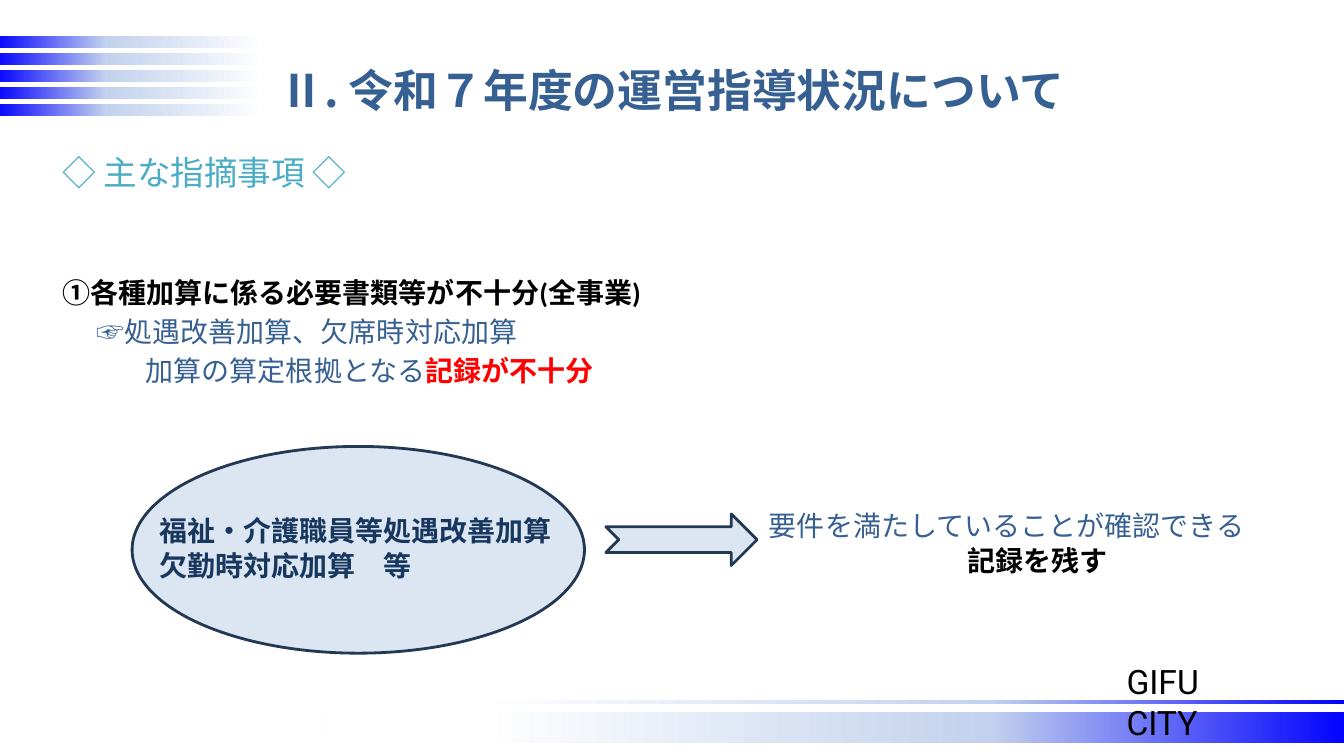
import lxml.etree
import pptx
import pptx.dml.color
import pptx.enum.shapes
import pptx.enum.text
import pptx.oxml.ns
import pptx.util
from pptx.util import Cm

SHAPES = pptx.enum.shapes.MSO_SHAPE
ANCHOR = pptx.enum.text.MSO_ANCHOR
ALIGN = pptx.enum.text.PP_ALIGN
qn = pptx.oxml.ns.qn

GOTHIC = "Noto Sans CJK JP"
BLUE, NAVY, BLACK, RED, TEAL = "376092", "17375E", "000000", "FF0000", "4BACC6"
PALE, OUTLINE = "DCE6F2", "233953"
FADE = [(0, "0000FF"), (35, "C2D1ED"), (85, "FFFFFF")]


def color(hex_code):
    return pptx.dml.color.RGBColor.from_string(hex_code)


def run(text, hex_code, size=20, bold=False, font=GOTHIC):
    return {"text": text, "color": hex_code, "east_asian": GOTHIC,
            "format": {"size": pptx.util.Pt(size), "bold": bold, "name": font}}


def line(*runs, indent=0, spacing=25, before=0, align=ALIGN.LEFT):
    """Describe a paragraph; a whole-number spacing is in points, a fraction is relative."""
    if isinstance(spacing, int):
        spacing = pptx.util.Pt(spacing)
    return {"runs": runs, "indent": indent,
            "format": {"line_spacing": spacing, "space_before": pptx.util.Pt(before),
                       "alignment": align}}


def apply(target, values):
    for name, value in values.items():
        setattr(target, name, value)


def write(frame, lines, anchor=ANCHOR.TOP):
    apply(frame, {"word_wrap": True, "vertical_anchor": anchor,
                  "auto_size": pptx.enum.text.MSO_AUTO_SIZE.NONE})
    for number, content in enumerate(lines):
        paragraph = frame.add_paragraph() if number else frame.paragraphs[0]
        properties = paragraph._p.get_or_add_pPr()
        properties.set("marL", str(Cm(content["indent"])))
        properties.set("indent", "0")
        lxml.etree.SubElement(properties, qn("a:buNone"))
        apply(paragraph, content["format"])
        for part in content["runs"]:
            piece = paragraph.add_run()
            piece.text = part["text"]
            apply(piece.font, part["format"])
            piece.font.color.rgb = color(part["color"])
            east_asian = lxml.etree.SubElement(piece._r.get_or_add_rPr(), qn("a:ea"))
            east_asian.set("typeface", part["east_asian"])


def fill_placeholder(slide, placeholder, box, lines, anchor=ANCHOR.TOP):
    """Move a placeholder in front of the bars and write its text."""
    apply(placeholder, dict(zip(("left", "top", "width", "height"), map(Cm, box))))
    slide.shapes._spTree.append(placeholder._element)
    write(placeholder.text_frame, lines, anchor)


def add_label(slide, box, lines):
    write(slide.shapes.add_textbox(*map(Cm, box)).text_frame, lines)


def add_outlined(slide, kind, box):
    shape = slide.shapes.add_shape(kind, *map(Cm, box))
    shape.shadow.inherit = False
    shape.fill.solid()
    shape.fill.fore_color.rgb = color(PALE)
    shape.line.color.rgb = color(OUTLINE)
    shape.line.width = pptx.util.Pt(2)


def add_fading_bar(slide, box, rotation=0):
    bar = slide.shapes.add_shape(SHAPES.RECTANGLE, *map(Cm, box))
    bar.shadow.inherit = False
    bar.rotation = rotation
    bar.line.fill.background()
    bar.fill.gradient()
    bar.fill.gradient_angle = 0
    stops = bar._element.spPr.find(qn("a:gradFill")).find(qn("a:gsLst"))
    for stop in list(stops):
        stops.remove(stop)
    for percent, hex_code in FADE:
        stop = lxml.etree.SubElement(stops, qn("a:gs"), pos=str(percent * 1000))
        lxml.etree.SubElement(stop, qn("a:srgbClr"), val=hex_code)


def main():
    deck = pptx.Presentation()
    deck.slide_width, deck.slide_height = Cm(33.87), Cm(19.05)
    slide = deck.slides.add_slide(deck.slide_layouts[1])
    title, findings = slide.placeholders

    add_fading_bar(slide, (8.25, 17.93, 25.73, 0.79), rotation=180)
    for stripe in range(5):
        add_fading_bar(slide, (-0.13, 0.91 + 0.43 * stripe, 8, 0.3))
    add_fading_bar(slide, (8.23, 17.63, 25.73, 0.1), rotation=180)
    add_label(slide, (28.14, 16.54, 4.06, 1.27),
              [line(run("GIFU CITY", BLACK, 24, font="Roboto"), spacing=1.0)])

    fill_placeholder(slide, title, (1.7, 0.76, 30.48, 3.18), [
        line(run("Ⅱ. 令和７年度の運営指導状況について", BLUE, 32, True),
             spacing=0.9, align=ALIGN.CENTER)], ANCHOR.MIDDLE)
    fill_placeholder(slide, findings, (1.32, 3.63, 29.21, 6.07), [
        line(run("◇ 主な指摘事項 ◇", TEAL, 24), spacing=31),
        line(run("①各種加算に係る必要書類等が不十分(全事業)", BLACK, bold=True, font="Calibri"),
             spacing=28, before=55),
        line(run("☞処遇改善加算、欠席時対応加算", BLUE), indent=0.86, spacing=28),
        line(run("加算の算定根拠となる", BLUE), run("記録が不十分", RED, bold=True),
             indent=2.1, spacing=28)])

    add_outlined(slide, SHAPES.OVAL, (3.33, 11.25, 11.4, 5.21))
    add_label(slide, (3.76, 12.78, 10.57, 1.96), [
        line(run(text, NAVY, bold=True, font="Calibri"))
        for text in ("福祉・介護職員等処遇改善加算", "欠勤時対応加算　等")])
    add_outlined(slide, SHAPES.NOTCHED_RIGHT_ARROW, (15.27, 12.95, 3.81, 1.3))
    add_label(slide, (19.13, 12.65, 12.62, 3.18), [
        line(run("要件を満たしていることが確認できる", BLUE)),
        line(run("記録を残す", BLACK, bold=True, font="Calibri"), indent=5)])

    deck.save("out.pptx")


if __name__ == "__main__":
    main()
